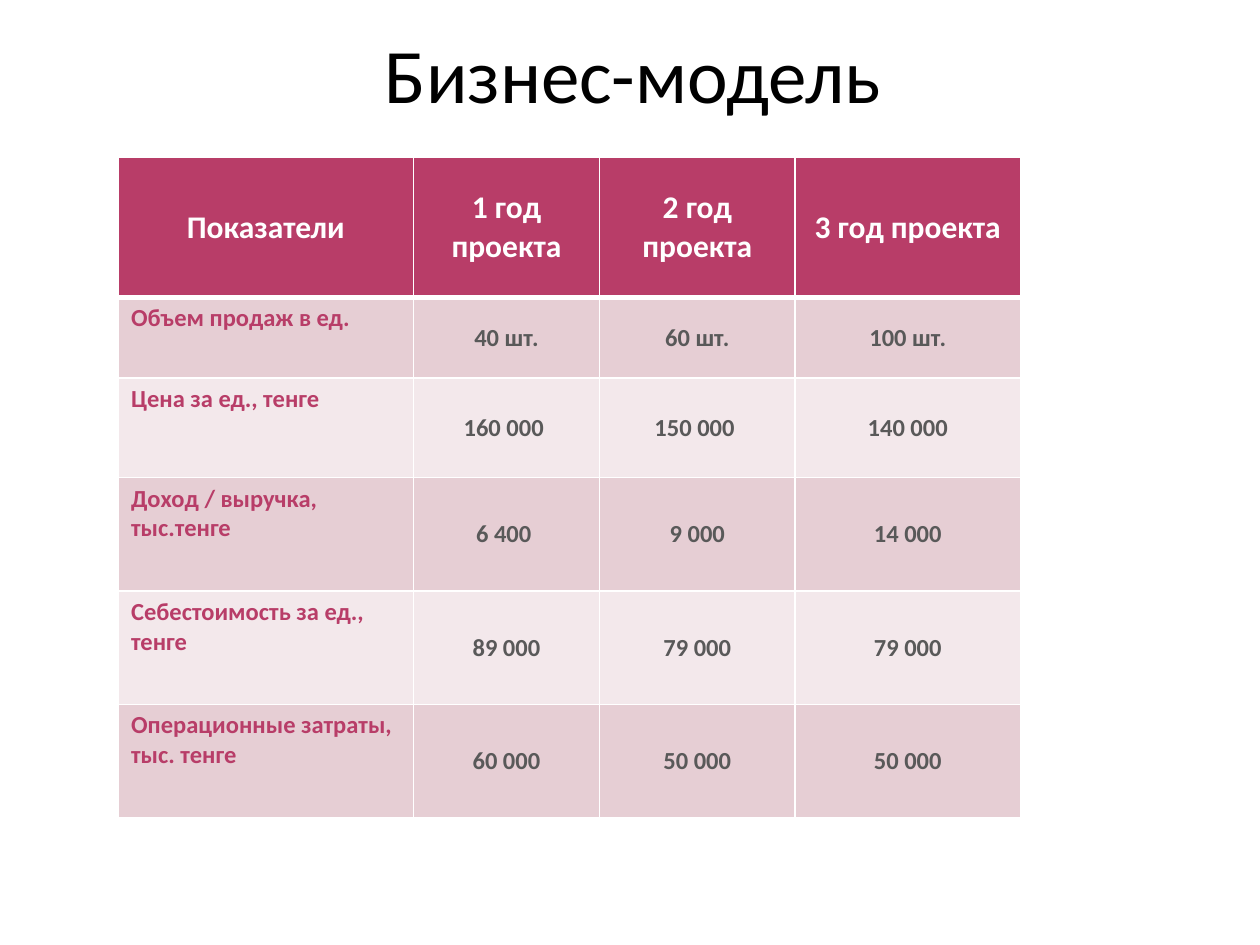
from dataclasses import dataclass

from lxml.etree import SubElement
from pptx import Presentation
from pptx.dml.color import RGBColor
from pptx.enum.text import MSO_ANCHOR as Anchor, PP_ALIGN as Align
from pptx.oxml.ns import qn
from pptx.util import Pt

FONT = "Calibri"
WHITE, BLACK, GREY = "FFFFFF", "000000", "595959"
BERRY, BAND_DARK, BAND_LIGHT = "B83D68", "E6CED4", "F3E8EB"

COLUMN_WIDTHS = (168.5, 106.5, 111.6, 128.9)
ROW_HEIGHTS = (79.9, 46.1, 56.9, 64.8, 64.8, 64.8)


@dataclass(frozen=True)
class CellStyle:
    size: float
    color: str
    align: Align = Align.CENTER
    anchor: Anchor = Anchor.MIDDLE


HEADER = CellStyle(18, WHITE)
LABEL = CellStyle(14, BERRY, Align.LEFT, Anchor.TOP)
VALUE = CellStyle(14, GREY)


@dataclass(frozen=True)
class Indicator:
    name: str
    years: tuple[str, str, str]


HEADINGS = Indicator("Показатели", ("1 год проекта", "2 год проекта", "3 год проекта"))
INDICATORS = (
    Indicator("Объем продаж в ед.", ("40 шт.", "60 шт.", "100 шт.")),
    Indicator("Цена за ед., тенге", ("160 000 ", "150 000 ", "140 000")),
    Indicator("Доход / выручка, тыс.тенге", ("6 400 ", "9 000", "14 000")),
    Indicator("Себестоимость за ед., тенге", ("89 000", "79 000", "79 000")),
    Indicator("Операционные затраты, тыс. тенге", ("60 000", "50 000", "50 000")),
)


def rgb(value: str) -> RGBColor:
    return RGBColor.from_string(value)


def add_run(paragraph, text: str, size: float, color: str, bold: bool = False) -> None:
    run = paragraph.add_run()
    run.text = text
    run.font.name = FONT
    run.font.size = Pt(size)
    run.font.bold = bold
    run.font.color.rgb = rgb(color)


def set_borders(cell, top: float, bottom: float) -> None:
    """Draw white borders; they must come before the fill in the cell XML."""
    properties = cell._tc.get_or_add_tcPr()
    widths = {"a:lnL": 1, "a:lnR": 1, "a:lnT": top, "a:lnB": bottom}
    for position, (side, width) in enumerate(widths.items()):
        line = SubElement(properties, qn(side), w=str(Pt(width)))
        color = SubElement(line, qn("a:solidFill"))
        SubElement(color, qn("a:srgbClr"), val=WHITE)
        properties.insert(position, line)


def fill_cell(cell, text: str, style: CellStyle, background: str) -> None:
    cell.fill.solid()
    cell.fill.fore_color.rgb = rgb(background)
    cell.vertical_anchor = style.anchor
    paragraph = cell.text_frame.paragraphs[0]
    paragraph.alignment = style.align
    add_run(paragraph, text, style.size, style.color, bold=True)


def add_title(slide, text: str) -> None:
    title = slide.shapes.title
    title.left, title.top, title.width, title.height = Pt(39.6), Pt(0), Pt(644.4), Pt(82.8)
    title.text_frame.vertical_anchor = Anchor.MIDDLE
    paragraph = title.text_frame.paragraphs[0]
    paragraph.alignment = Align.CENTER
    add_run(paragraph, text, 44, BLACK)


def add_model_table(slide) -> None:
    model = slide.shapes.add_table(
        len(ROW_HEIGHTS), len(COLUMN_WIDTHS), Pt(67.7), Pt(90),
        Pt(sum(COLUMN_WIDTHS)), Pt(sum(ROW_HEIGHTS)),
    ).table
    for column, width in zip(model.columns, COLUMN_WIDTHS):
        column.width = Pt(width)
    for row, height in zip(model.rows, ROW_HEIGHTS):
        row.height = Pt(height)

    for r, indicator in enumerate((HEADINGS, *INDICATORS)):
        # Header row first, then alternating bands
        background = BERRY if r == 0 else (BAND_LIGHT, BAND_DARK)[r % 2]
        for c, text in enumerate((indicator.name, *indicator.years)):
            style = HEADER if r == 0 else LABEL if c == 0 else VALUE
            cell = model.cell(r, c)
            fill_cell(cell, text, style, background)
            set_borders(cell, top=3 if r == 1 else 1, bottom=3 if r == 0 else 1)


def main() -> None:
    presentation = Presentation()
    presentation.slide_width, presentation.slide_height = Pt(720), Pt(540)
    slide = presentation.slides.add_slide(presentation.slide_layouts[5])
    add_title(slide, "Бизнес-модель")
    add_model_table(slide)
    presentation.save("out.pptx")


if __name__ == "__main__":
    main()
